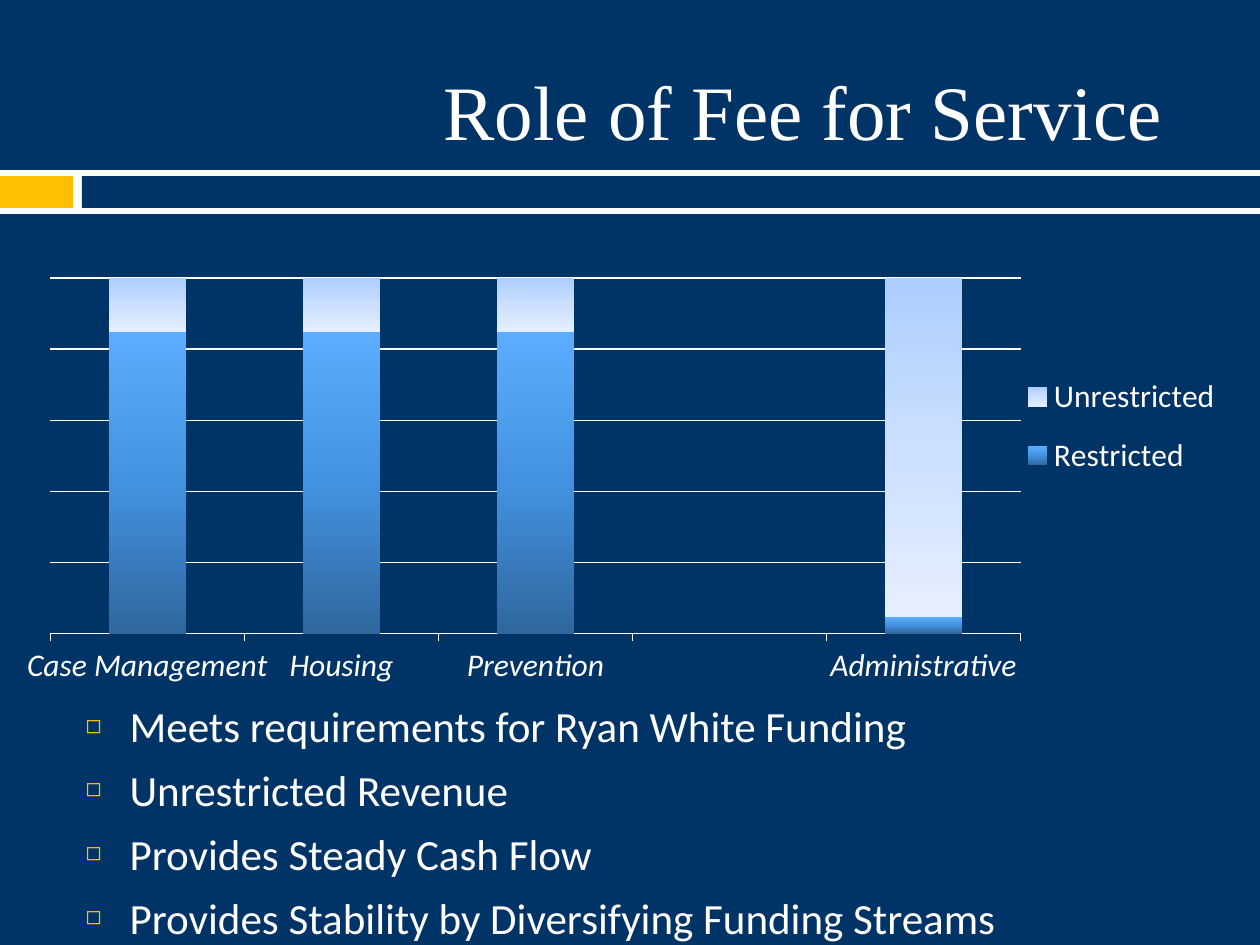
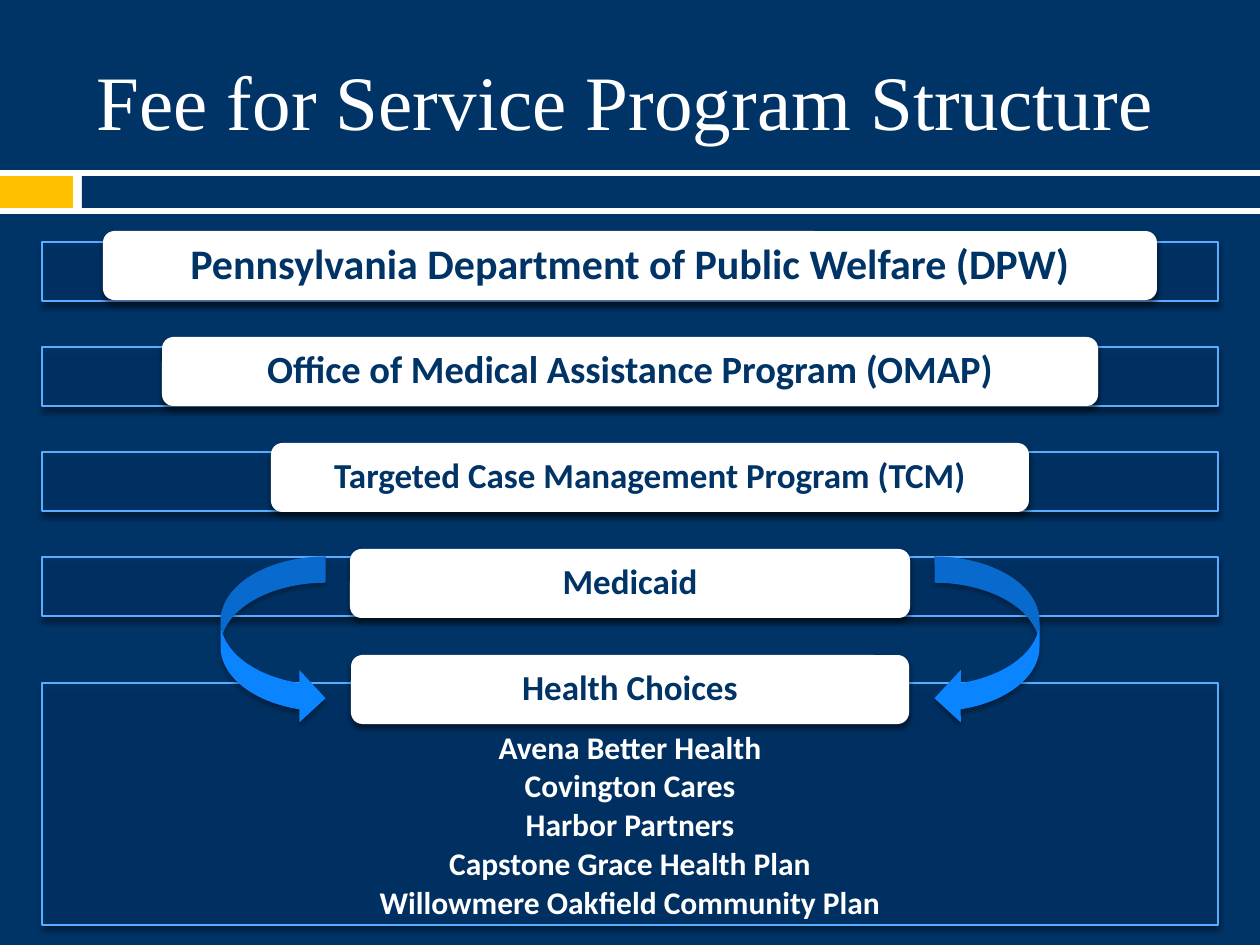
from lxml import etree
from pptx import Presentation
from pptx.chart.data import CategoryChartData
from pptx.dml.color import RGBColor
from pptx.enum.chart import XL_CHART_TYPE, XL_LEGEND_POSITION, XL_TICK_LABEL_POSITION, XL_TICK_MARK
from pptx.enum.shapes import MSO_SHAPE
from pptx.enum.text import MSO_ANCHOR, MSO_AUTO_SIZE, PP_ALIGN
from pptx.oxml.ns import qn
from pptx.util import Emu, Pt

RECTANGLE = MSO_SHAPE.RECTANGLE
ROUNDED = MSO_SHAPE.ROUNDED_RECTANGLE
CURVED_ARROW = MSO_SHAPE.CURVED_DOWN_ARROW
LEFT, CENTER = PP_ALIGN.LEFT, PP_ALIGN.CENTER
TOP, MIDDLE = MSO_ANCHOR.TOP, MSO_ANCHOR.MIDDLE
NO_AUTOFIT = MSO_AUTO_SIZE.NONE
STACKED_COLUMNS = XL_CHART_TYPE.COLUMN_STACKED
LEGEND_RIGHT = XL_LEGEND_POSITION.RIGHT
LABELS_LOW = XL_TICK_LABEL_POSITION.LOW
TICK_OUTSIDE = XL_TICK_MARK.OUTSIDE

NAVY = RGBColor(0x00, 0x33, 0x66)
WHITE = RGBColor(0xFF, 0xFF, 0xFF)
AMBER = RGBColor(0xFF, 0xC0, 0x00)
SKY = RGBColor(0x5C, 0xAD, 0xFF)
ARROW_BLUE = RGBColor(0x0A, 0x85, 0xFF)
BLACK = RGBColor(0x00, 0x00, 0x00)
RESTRICTED_STOPS = (RGBColor(0x2F, 0x67, 0x9E), RGBColor(0x43, 0x92, 0xE1), SKY)
UNRESTRICTED_STOPS = (RGBColor(0xAC, 0xCE, 0xFF), RGBColor(0xCC, 0xDF, 0xFF),
                      RGBColor(0xE6, 0xEF, 0xFF))

TITLE_FONT = "Times New Roman"
BODY_FONT = "Calibri"
EMU_PER_PX = 914400 / 126
SLIDE_WIDTH, SLIDE_HEIGHT = 1260, 945

FUNDING_POINTS = (
    "Meets requirements for Ryan White Funding",
    "Unrestricted Revenue",
    "Provides Steady Cash Flow",
    "Provides Stability by Diversifying Funding Streams",
)
CATEGORIES = ("Case Management", "Housing", "Prevention", "", "Administrative")
RESTRICTED = (89, 89, 89, None, 5)
UNRESTRICTED = (16, 16, 16, None, 100)

# Label, left, width, text size of each level
LEVELS = (
    ("Pennsylvania Department of Public Welfare (DPW)", 103, 1054, 24),
    ("Office of Medical Assistance Program (OMAP)", 162, 936, 22),
    ("Targeted Case Management Program (TCM)", 271, 758, 20),
    ("Medicaid", 350, 560, 20),
    ("Health Choices", 351, 558, 20),
)
HEALTH_PLANS = (
    "Avena Better Health",
    "Covington Cares",
    "Harbor Partners",
    "Capstone Grace Health Plan",
    "Willowmere Oakfield Community Plan",
)


def px(length):
    return Emu(round(length * EMU_PER_PX))


def place(shape, left, top, width, height):
    shape.left, shape.top = px(left), px(top)
    shape.width, shape.height = px(width), px(height)


def add_run(paragraph, text, size, color, font=BODY_FONT, bold=False):
    run = paragraph.add_run()
    run.text = text
    run.font.name = font
    run.font.size = Pt(size)
    run.font.color.rgb = color
    run.font.bold = bold


def add_paragraphs(frame, texts):
    """Yield one paragraph for each text, starting with the first one."""
    for index, text in enumerate(texts):
        yield (frame.add_paragraph() if index else frame.paragraphs[0]), text


def add_block(slide, kind, box, fill, line=None):
    shape = slide.shapes.add_shape(kind, *map(px, box))
    shape.shadow.inherit = False
    shape.fill.solid()
    shape.fill.fore_color.rgb = fill
    if line is None:
        shape.line.fill.background()
    else:
        shape.line.color.rgb = line
        shape.line.width = Pt(0.79)
    return shape


def add_alpha(color_element, percent):
    etree.SubElement(color_element, qn("a:alpha"), val=str(percent * 1000))


def add_shadow(shape, opacity, distance):
    effects = shape.element.spPr.find(qn("a:effectLst"))
    shadow = etree.SubElement(effects, qn("a:outerShdw"), blurRad=str(Pt(3)),
                              dist=str(Pt(distance)), dir="5400000", rotWithShape="0")
    add_alpha(etree.SubElement(shadow, qn("a:srgbClr"), val=str(BLACK)), opacity)


def set_title(slide, text, box):
    title = slide.shapes.title
    place(title, *box)
    frame = title.text_frame
    frame.auto_size = NO_AUTOFIT
    frame.vertical_anchor = MIDDLE
    paragraph = frame.paragraphs[0]
    paragraph.alignment = LEFT
    add_run(paragraph, text, 44, WHITE, TITLE_FONT)


def add_bullet(paragraph):
    properties = paragraph._p.get_or_add_pPr()
    properties.set("marL", str(px(44)))
    properties.set("indent", str(-px(44)))
    color = etree.SubElement(properties, qn("a:buClr"))
    etree.SubElement(color, qn("a:srgbClr"), val=str(AMBER))
    etree.SubElement(properties, qn("a:buSzPct"), val="60000")
    etree.SubElement(properties, qn("a:buChar"), char="◻")


def set_bullets(placeholder, texts, box):
    place(placeholder, *box)
    frame = placeholder.text_frame
    frame.auto_size = NO_AUTOFIT
    for paragraph, text in add_paragraphs(frame, texts):
        paragraph.space_before = Pt(7)
        add_bullet(paragraph)
        add_run(paragraph, text, 24.6, WHITE)


def add_master_bands(presentation, slide):
    """Draw the title bands and hand them to the slide master."""
    bands = (
        ((0, 170, SLIDE_WIDTH, 44), WHITE),
        ((0, 176, 73, 32), AMBER),
        ((82, 176, SLIDE_WIDTH - 82, 32), NAVY),
    )
    for number, (box, color) in enumerate(bands, start=20):
        band = add_block(slide, RECTANGLE, box, color)
        band.element.nvSpPr.cNvPr.set("id", str(number))
        presentation.slide_master.shapes.element.append(band.element)


def set_layout(parent, position, left, top, width, height, inner=False):
    """Fix a chart part at fractions of the chart's size."""
    for old in parent.findall(qn("c:layout")):
        parent.remove(old)
    layout = etree.Element(qn("c:layout"))
    manual = etree.SubElement(layout, qn("c:manualLayout"))
    if inner:
        etree.SubElement(manual, qn("c:layoutTarget"), val="inner")
    for name in ("xMode", "yMode"):
        etree.SubElement(manual, qn("c:" + name), val="edge")
    for name, value in zip("xywh", (left, top, width, height)):
        etree.SubElement(manual, qn("c:" + name), val=str(value))
    parent.insert(position, layout)


def set_gradient_stops(gradient, colors):
    stops = gradient.find(qn("a:gsLst"))
    for stop in list(stops):
        stops.remove(stop)
    for index, color in enumerate(colors):
        stop = etree.SubElement(stops, qn("a:gs"), pos=str(index * 50000))
        etree.SubElement(stop, qn("a:srgbClr"), val=str(color))


def add_funding_chart(slide, box):
    data = CategoryChartData()
    data.categories = CATEGORIES
    data.add_series("Restricted", RESTRICTED)
    data.add_series("Unrestricted", UNRESTRICTED)
    chart = slide.shapes.add_chart(STACKED_COLUMNS, *map(px, box), data).chart
    chart.has_title = False
    chart.font.name = BODY_FONT
    chart.font.size = Pt(18)
    chart.font.color.rgb = WHITE

    # Columns
    plot = chart.plots[0]
    plot.gap_width, plot.overlap = 150, 100
    plot.vary_by_categories = False
    for series, angle in zip(plot.series, (90, 270)):
        series.invert_if_negative = False
        series.format.fill.gradient()
        series.format.fill.gradient_angle = angle
    gradients = chart.element.xpath(".//c:ser/c:spPr/a:gradFill")
    for gradient, colors in zip(gradients, (RESTRICTED_STOPS, UNRESTRICTED_STOPS)):
        set_gradient_stops(gradient, colors)

    # Axes: each full column adds up to 105
    values = chart.value_axis
    values.minimum_scale, values.maximum_scale, values.major_unit = 0, 105, 21
    values.has_major_gridlines = True
    values.major_gridlines.format.line.color.rgb = WHITE
    values.major_gridlines.format.line.width = Pt(0.75)
    values.visible = False
    categories = chart.category_axis
    categories.major_tick_mark = TICK_OUTSIDE
    categories.tick_label_position = LABELS_LOW
    categories.tick_labels.font.italic = True
    categories.tick_labels.font.size = Pt(18)
    categories.tick_labels.font.color.rgb = WHITE
    categories.format.line.color.rgb = WHITE
    categories.format.line.width = Pt(0.75)

    # Legend and plot area
    chart.has_legend = True
    chart.legend.position = LEGEND_RIGHT
    chart.legend.include_in_layout = False
    set_layout(chart.element.xpath(".//c:plotArea")[0], 0, 0.04, 0.16, 0.77, 0.72, inner=True)
    set_layout(chart.element.xpath(".//c:legend")[0], 1, 0.8, 0.32, 0.18, 0.28)


def add_panel(slide, box):
    panel = add_block(slide, RECTANGLE, box, NAVY, SKY)
    add_alpha(panel.element.spPr.find(qn("a:solidFill"))[0], 90)
    add_shadow(panel, 45, 2.4)
    return panel


def set_centered_text(shape, texts, size, color, anchor, margins, space_after=0):
    frame = shape.text_frame
    frame.word_wrap = True
    frame.vertical_anchor = anchor
    side, top, bottom = map(px, margins)
    frame.margin_left = frame.margin_right = side
    frame.margin_top, frame.margin_bottom = top, bottom
    for paragraph, text in add_paragraphs(frame, texts):
        paragraph.alignment = CENTER
        paragraph.line_spacing = 0.9
        paragraph.space_after = Pt(space_after)
        add_run(paragraph, text, size, color, bold=True)


def add_level_box(slide, label, box, size):
    shape = add_block(slide, ROUNDED, box, WHITE)
    add_shadow(shape, 45, 2.4)
    set_centered_text(shape, [label], size, NAVY, MIDDLE, (34, 4, 4))


def add_arrow(slide, left, rotation, flipped=False):
    arrow = add_block(slide, CURVED_ARROW, (left, 588, 168, 105), ARROW_BLUE)
    arrow.rotation = rotation
    if flipped:
        arrow.element.spPr.find(qn("a:xfrm")).set("flipH", "1")
    add_shadow(arrow, 35, 2)


def build_role_slide(slide):
    set_title(slide, "Role of Fee for Service", (431, 42, 829, 136))
    set_bullets(slide.placeholders[1], FUNDING_POINTS, (73, 693, 1187, 220))
    add_funding_chart(slide, (0, 199, SLIDE_WIDTH, 494))


def build_structure_slide(slide):
    set_title(slide, "Fee for Service Program Structure", (84, 32, 1124, 136))
    # The last level heads the list of plans, the others have a thin panel
    for index, (label, left, width, size) in enumerate(LEVELS):
        if index < len(LEVELS) - 1:
            add_panel(slide, (42, 242 + 105 * index, 1176, 59))
        else:
            plans = add_panel(slide, (42, 683, 1176, 242))
            set_centered_text(plans, HEALTH_PLANS, 18, WHITE, TOP, (91, 49, 16), 2.7)
        add_level_box(slide, label, (left, 231 + 106 * index, width, 69), size)
    add_arrow(slide, 903, 90)
    add_arrow(slide, 189, 270, flipped=True)


def main():
    presentation = Presentation()
    presentation.slide_width = px(SLIDE_WIDTH)
    presentation.slide_height = px(SLIDE_HEIGHT)
    background = presentation.slide_master.background.fill
    background.solid()
    background.fore_color.rgb = NAVY

    layouts = presentation.slide_layouts
    role_slide = presentation.slides.add_slide(layouts.get_by_name("Title and Content"))
    add_master_bands(presentation, role_slide)
    build_role_slide(role_slide)
    build_structure_slide(presentation.slides.add_slide(layouts.get_by_name("Title Only")))
    presentation.save("out.pptx")


if __name__ == "__main__":
    main()
